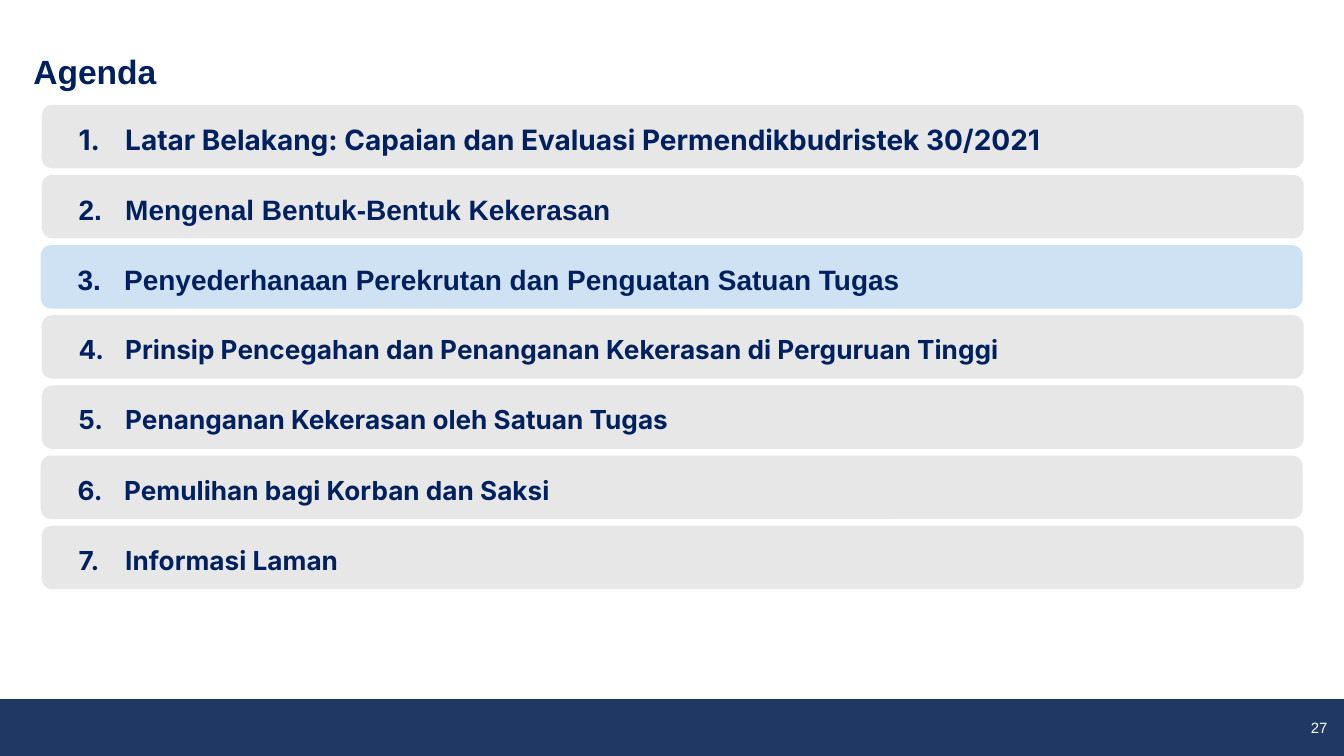
from lxml import etree
from pptx import Presentation
from pptx import util as u
from pptx.dml.color import RGBColor
from pptx.enum import shapes, text
from pptx.oxml.ns import qn

COLORS = {
    "navy": "002060",
    "footer": "1F3864",
    "grey": "D8D8D8",
    "current": "CFE2F3",
    "white": "FFFFFF",
}
CURRENT = 3
# Wording, font and size of each agenda item
AGENDA = [
    ("Latar Belakang: Capaian dan Evaluasi Permendikbudristek 30/2021", "Inter", 15),
    ("Mengenal Bentuk-Bentuk Kekerasan", "Arial", 15),
    ("Penyederhanaan Perekrutan dan Penguatan Satuan Tugas", "Arial", 15),
    ("Prinsip Pencegahan dan Penanganan Kekerasan di Perguruan Tinggi", "Inter", 14),
    ("Penanganan Kekerasan oleh Satuan Tugas", "Inter", 14),
    ("Pemulihan bagi Korban dan Saksi", "Inter", 14),
    ("Informasi Laman", "Inter", 14),
]
FIRST_TOP, LAST_TOP = 1.98, 9.93
PITCH = (LAST_TOP - FIRST_TOP) / (len(AGENDA) - 1)


def rgb(name):
    return RGBColor.from_string(COLORS[name])


def place(sp, left, top, width, height):
    sp.left, sp.top, sp.width, sp.height = map(u.Cm, (left, top, width, height))


def set_frame(tf, side, edge):
    tf.word_wrap = True
    tf.auto_size = text.MSO_AUTO_SIZE.NONE
    tf.vertical_anchor = text.MSO_ANCHOR.MIDDLE
    tf.margin_left = tf.margin_right = u.Cm(side)
    tf.margin_top = tf.margin_bottom = u.Cm(edge)


def add_run(p, wording, font, size, color, bold=False):
    r = p.add_run()
    r.text = wording
    r.font.name = font
    r.font.size = u.Pt(size)
    r.font.bold = bold
    r.font.color.rgb = rgb(color)


def set_indent(p, left, first=0):
    pPr = p._p.get_or_add_pPr()
    pPr.set("marL", str(u.Cm(left)))
    pPr.set("indent", str(u.Cm(first)))
    return pPr


def number_paragraph(p, number):
    pPr = set_indent(p, 1.27, -0.88)
    clr = etree.SubElement(pPr, qn("a:buClr"))
    etree.SubElement(clr, qn("a:srgbClr"), val=COLORS["navy"])
    etree.SubElement(pPr, qn("a:buAutoNum"), type="arabicPeriod", startAt=str(number))


def add_block(slide, kind, box, color, opacity=100):
    sp = slide.shapes.add_shape(kind, *map(u.Cm, box))
    sp.shadow.inherit = False
    sp.fill.solid()
    sp.fill.fore_color.rgb = rgb(color)
    sp.line.fill.background()
    if opacity < 100:
        clr = sp.fill._xPr.find(qn("a:solidFill")).find(qn("a:srgbClr"))
        etree.SubElement(clr, qn("a:alpha"), val=str(opacity * 1000))
    return sp


def add_footer(slide, page):
    bar = add_block(slide, shapes.MSO_SHAPE.RECTANGLE, (0, 13.23, 25.4, 1.05), "footer")
    bar.line.color.rgb = rgb("footer")
    bar.line.width = u.Pt(1)
    sp = slide.shapes.add_textbox(*map(u.Cm, (23.62, 13.49, 1.65, 0.5)))
    set_frame(sp.text_frame, 0.18, 0.1)
    p = sp.text_frame.paragraphs[0]
    p.alignment = text.PP_ALIGN.RIGHT
    add_run(p, page, "Arial", 8, "white")


def add_title(slide, wording):
    sp = slide.shapes.title
    place(sp, 0.28, 0.56, 24.43, 1.55)
    set_frame(sp.text_frame, 0.1, 0.05)
    p = sp.text_frame.paragraphs[0]
    p.alignment = text.PP_ALIGN.LEFT
    set_indent(p, 0.25)
    add_run(p, wording, "Arial", 18, "navy", bold=True)


def add_agenda_item(slide, number, wording, font, size):
    left = 0.77 if number % 3 == 0 else 0.79
    box = (left, FIRST_TOP + (number - 1) * PITCH, 23.85, 1.2)
    color, opacity = ("current", 100) if number == CURRENT else ("grey", 60)
    sp = add_block(slide, shapes.MSO_SHAPE.ROUNDED_RECTANGLE, box, color, opacity)
    set_frame(sp.text_frame, 0.25, 0.13)
    p = sp.text_frame.paragraphs[0]
    p.alignment = text.PP_ALIGN.LEFT
    p.line_spacing = 1.15
    number_paragraph(p, number)
    add_run(p, wording, font, size, "navy", bold=True)


def main():
    prs = Presentation()
    prs.slide_width, prs.slide_height = u.Cm(25.4), u.Cm(14.28)
    slide = prs.slides.add_slide(prs.slide_layouts[5])

    # Footer bar with page number, then heading
    add_footer(slide, "27")
    add_title(slide, "Agenda")

    # Agenda bars
    for number, item in enumerate(AGENDA, start=1):
        add_agenda_item(slide, number, *item)

    prs.save("out.pptx")


if __name__ == "__main__":
    main()
